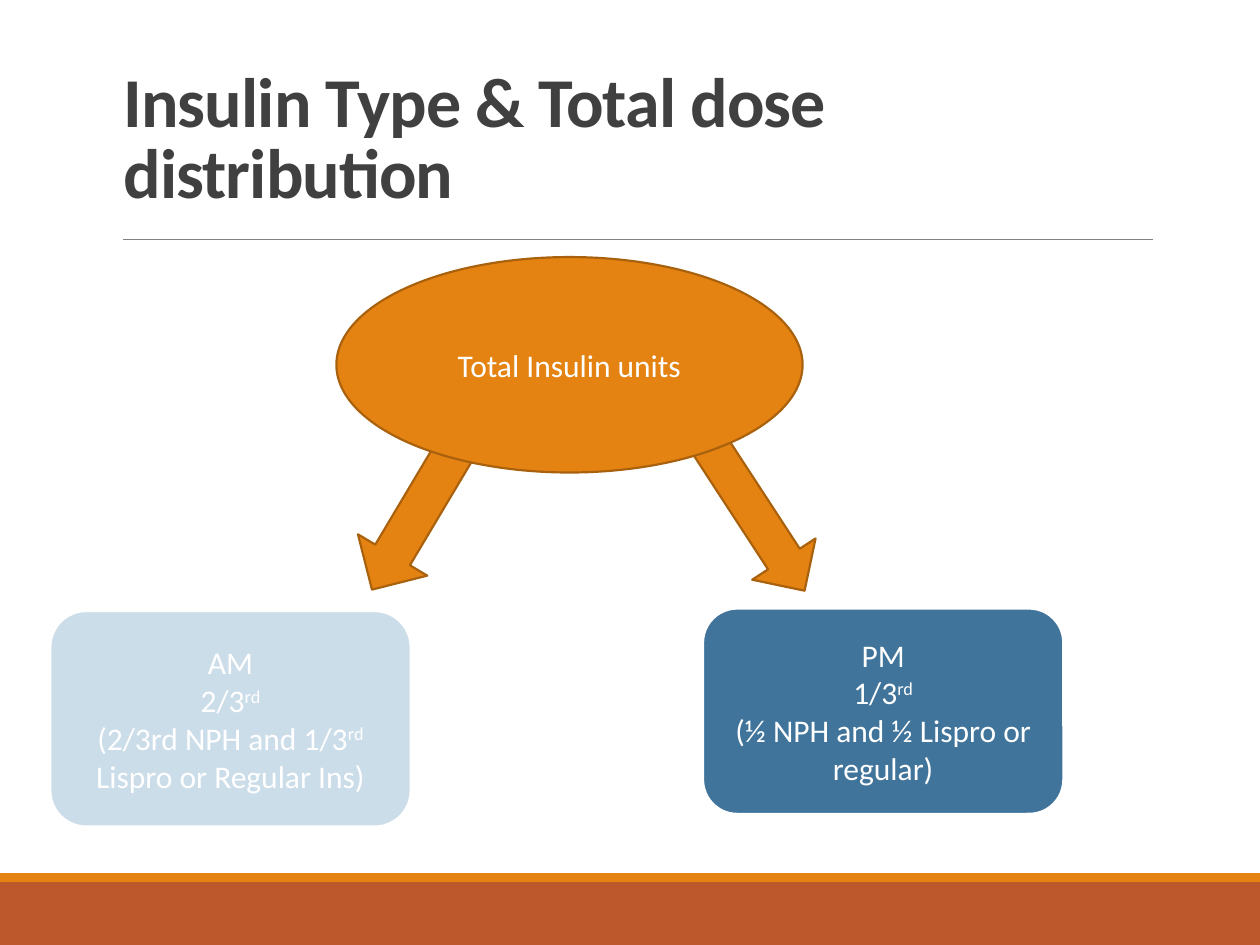
from dataclasses import dataclass

from lxml.etree import SubElement
from pptx import Presentation
from pptx.dml.color import RGBColor
from pptx.enum.shapes import MSO_CONNECTOR, MSO_SHAPE
from pptx.enum.text import MSO_ANCHOR, MSO_AUTO_SIZE, PP_ALIGN
from pptx.oxml.ns import qn
from pptx.util import Inches, Pt


@dataclass(frozen=True)
class Theme:
    font: str = "Calibri"
    title_size: float = 40
    body_size: float = 18
    outline_width: float = 1.25
    rule_width: float = 0.5
    title: str = "404040"
    rule: str = "808080"
    orange: str = "E48312"
    orange_edge: str = "A9610D"
    rust: str = "BD582C"
    blue: str = "40749B"
    pale_blue: str = "CCDDEA"
    white: str = "FFFFFF"


@dataclass(frozen=True)
class Box:
    left: float
    top: float
    width: float
    height: float

    def inner(self, left, top, width, height):
        """Return a box given relative to this one."""
        return Box(self.left + left, self.top + top, width, height)

    def lengths(self):
        return [Inches(v) for v in (self.left, self.top, self.width, self.height)]


THEME = Theme()


def color(value):
    return RGBColor.from_string(value)


def format_span(span, size, fill, bold=False):
    values = {"name": THEME.font, "size": Pt(size), "bold": bold}
    for name, value in values.items():
        setattr(span.font, name, value)
    span.font.color.rgb = color(fill)


def add_block(page, kind, box, fill, edge=None, rotation=0):
    shape = page.shapes.add_shape(kind, *box.lengths())
    shape.shadow.inherit = False
    shape.rotation = rotation
    shape.fill.solid()
    shape.fill.fore_color.rgb = color(fill)
    if edge:
        shape.line.color.rgb = color(edge)
        shape.line.width = Pt(THEME.outline_width)
    else:
        shape.line.fill.background()
    return shape


def write_lines(shape, lines):
    """Fill a shape with centred lines; "^" marks switch superscript on and off."""
    frame = shape.text_frame
    frame.word_wrap = True
    frame.vertical_anchor = MSO_ANCHOR.MIDDLE
    for index, line in enumerate(lines):
        para = frame.add_paragraph() if index else frame.paragraphs[0]
        para.alignment = PP_ALIGN.CENTER
        for position, text in enumerate(line.split("^")):
            span = para.add_run()
            span.text = text
            format_span(span, THEME.body_size, THEME.white)
            if position % 2:
                span.font._element.set("baseline", "30000")


def add_footer(page, box):
    stripe = 0.07
    add_block(page, MSO_SHAPE.RECTANGLE,
              box.inner(0, stripe, box.width, box.height - stripe), THEME.rust)
    add_block(page, MSO_SHAPE.RECTANGLE,
              box.inner(0, 0, box.width, stripe), THEME.orange)


def add_heading(page, box, text):
    title = page.shapes.title
    for name, value in zip(("left", "top", "width", "height"), box.lengths()):
        setattr(title, name, value)
    frame = title.text_frame
    values = {"word_wrap": True, "auto_size": MSO_AUTO_SIZE.NONE,
              "vertical_anchor": MSO_ANCHOR.BOTTOM}
    for name, value in values.items():
        setattr(frame, name, value)
    para = frame.paragraphs[0]
    para.alignment = PP_ALIGN.LEFT
    para.line_spacing = 0.85
    span = para.add_run()
    span.text = text
    format_span(span, THEME.title_size, THEME.title, bold=True)
    span.font._element.set("spc", "-50")

    # Rule below the title
    left, y = Inches(box.left + 0.1), Inches(box.top + 1.39)
    rule = page.shapes.add_connector(
        MSO_CONNECTOR.STRAIGHT, left, y, left + Inches(8.17), y)
    rule.line.color.rgb = color(THEME.rule)
    rule.line.width = Pt(THEME.rule_width)
    SubElement(rule._element.spPr, qn("a:effectLst"))


def add_dose_split(page, box):
    # Arrows lie behind the ellipse
    arrows = [
        (MSO_SHAPE.RIGHT_ARROW, (4.88, 1.75, 1.43, 0.6), 56.9),
        (MSO_SHAPE.DOWN_ARROW, (2.67, 1.05, 0.64, 1.71), 30.8),
    ]
    for kind, place, rotation in arrows:
        add_block(page, kind, box.inner(*place), THEME.orange,
                  THEME.orange_edge, rotation)

    # Evening and morning doses, then the total
    nodes = [
        (MSO_SHAPE.ROUNDED_RECTANGLE, (5.18, 2.79, 2.86, 1.63),
         THEME.blue, THEME.white,
         ["PM", "1/3^rd", "(½ NPH and ½ Lispro or regular)"]),
        (MSO_SHAPE.ROUNDED_RECTANGLE, (0, 2.81, 2.86, 1.71),
         THEME.pale_blue, THEME.white,
         ["AM", "2/3^rd", "(2/3rd NPH and 1/3^rd^ Lispro or Regular Ins)"]),
        (MSO_SHAPE.OVAL, (2.27, 0, 3.7, 1.71),
         THEME.orange, THEME.orange_edge, ["Total Insulin units"]),
    ]
    for kind, place, fill, edge, lines in nodes:
        write_lines(add_block(page, kind, box.inner(*place), fill, edge), lines)


def main():
    deck = Presentation()
    deck.slide_width, deck.slide_height = Inches(10), Inches(7.5)
    page = deck.slides.add_slide(deck.slide_layouts[5])
    page.background.fill.solid()
    page.background.fill.fore_color.rgb = color(THEME.white)
    add_footer(page, Box(0, 6.93, 10, 0.57))
    add_heading(page, Box(0.88, 0.51, 8.25, 1.23),
                "Insulin Type & Total dose distribution")
    add_dose_split(page, Box(0.4, 2.04, 8.04, 4.52))
    deck.save("out.pptx")


if __name__ == "__main__":
    main()
